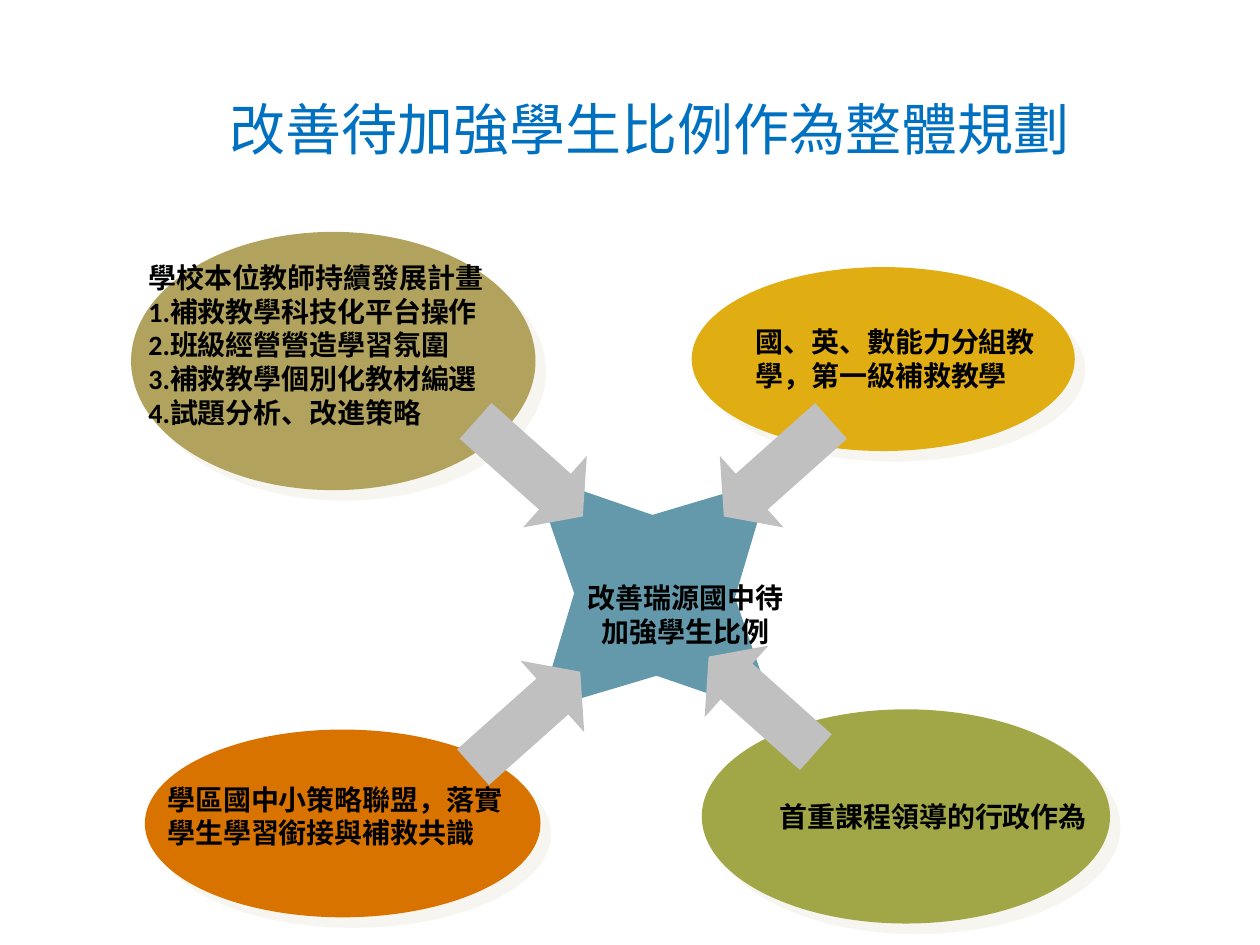
import pptx
import pptx.dml.color
import pptx.enum.shapes
import pptx.enum.text
import pptx.oxml
import pptx.oxml.ns
import pptx.util
from pptx.util import Inches

RGBColor = pptx.dml.color.RGBColor
Shape = pptx.enum.shapes.MSO_SHAPE
Align = pptx.enum.text.PP_ALIGN
Anchor = pptx.enum.text.MSO_ANCHOR

TITLE_BLUE = RGBColor(0x00, 0x70, 0xC0)
BLACK = RGBColor(0x00, 0x00, 0x00)
STAR_BLUE = RGBColor(0x63, 0x99, 0xAB)
KHAKI = RGBColor(0xB1, 0xA3, 0x5D)
GOLD = RGBColor(0xE0, 0xAD, 0x12)
ORANGE = RGBColor(0xD9, 0x73, 0x00)
OLIVE = RGBColor(0xA1, 0xA6, 0x46)
ARROW_GREY = RGBColor(0xC0, 0xC0, 0xC0)
SHADOW = RGBColor(0xEE, 0xEC, 0xE1)

CJK_FONT = "Noto Sans CJK SC"
LATIN_FONT = "Calibri"


def write_text(frame, text, *, size=16, font=LATIN_FONT, color=BLACK,
               bold=True, align=Align.LEFT, anchor=Anchor.TOP):
    """Fill the frame with one paragraph per line of text."""
    frame.word_wrap = True
    frame.vertical_anchor = anchor
    for index, line in enumerate(text.split("\n")):
        para = frame.paragraphs[0] if index == 0 else frame.add_paragraph()
        para.alignment = align
        span = para.add_run()
        span.text = line
        span.font.name = font
        span.font.size = pptx.util.Pt(size)
        span.font.bold = bold
        span.font.color.rgb = color


def add_soft_shadow(shape):
    """Cast a pale, half transparent shadow to the lower right."""
    effects = shape._element.spPr.find(pptx.oxml.ns.qn("a:effectLst"))
    effects.append(pptx.oxml.parse_xml(
        f'<a:outerShdw {pptx.oxml.ns.nsdecls("a")} blurRad="0" '
        f'dist="{pptx.util.Pt(8.5)}" dir="{45 * 60000}" algn="ctr" '
        f'rotWithShape="0"><a:srgbClr val="{SHADOW}">'
        '<a:alpha val="50000"/></a:srgbClr></a:outerShdw>'))


class PlanSlide:
    def __init__(self, deck):
        self.page = deck.slides.add_slide(deck.slide_layouts[0])
        subtitle = self.page.placeholders[1]._element
        subtitle.getparent().remove(subtitle)

    def title(self, text, left, top, width, height):
        box = self.page.shapes.title
        box.left, box.top = Inches(left), Inches(top)
        box.width, box.height = Inches(width), Inches(height)
        write_text(box.text_frame, text, size=32, font=CJK_FONT,
                   color=TITLE_BLUE, bold=False, align=Align.CENTER,
                   anchor=Anchor.MIDDLE)

    def shape(self, kind, place, color, rotation=0):
        shape = self.page.shapes.add_shape(kind, *map(Inches, place))
        shape.shadow.inherit = False
        shape.fill.solid()
        shape.fill.fore_color.rgb = color
        shape.line.fill.background()
        shape.rotation = rotation
        return shape

    def star(self, place):
        star = self.shape(Shape.STAR_4_POINT, place, STAR_BLUE, 315)
        star.adjustments[0] = 0.24

    def ellipse(self, place, color):
        add_soft_shadow(self.shape(Shape.OVAL, place, color))

    def arrow(self, left, top, rotation):
        arrow = self.shape(Shape.RIGHT_ARROW, (left, top, 1.14, 0.76),
                           ARROW_GREY, rotation)
        arrow.adjustments[0] = 0.5
        arrow.adjustments[1] = 0.39

    def label(self, text, place, **style):
        box = self.page.shapes.add_textbox(*map(Inches, place))
        write_text(box.text_frame, text, **style)


def main():
    deck = pptx.Presentation()
    deck.slide_width, deck.slide_height = Inches(10), Inches(7.5)
    plan = PlanSlide(deck)
    plan.title("改善待加強學生比例作為整體規劃", 0.91, 0.21, 8.5, 1.61)
    plan.star((3.9, 3.36, 2.59, 2.73))

    for place, color in (
        ((1.04, 1.84, 3.21, 2.05), KHAKI),
        ((5.49, 2.12, 3.04, 1.46), GOLD),
        ((1.15, 5.79, 3.14, 1.49), ORANGE),
        ((5.57, 5.63, 3.24, 1.7), OLIVE),
    ):
        plan.ellipse(place, color)

    # Every arrow points from its ellipse to the star, at one slope.
    slope = 41.7
    plan.arrow(3.61, 5.33, 360 - slope)
    plan.arrow(5.48, 5.21, 180 + slope)
    plan.arrow(3.63, 3.34, slope)
    plan.arrow(5.6, 3.34, 180 - slope)

    plan.label("改善瑞源國中待\n加強學生比例", (4.1, 4.56, 2.68, 0.64),
               font=CJK_FONT, align=Align.CENTER)
    for text, place in (
        ("學區國中小策略聯盟，落實學生學習銜接與補救共識",
         (1.23, 6.16, 2.92, 0.64)),
        ("學校本位教師持續發展計畫\n1.補救教學科技化平台操作\n"
         "2.班級經營營造學習氛圍\n3.補救教學個別化教材編選\n"
         "4.試題分析、改進策略", (1.08, 2.02, 3.23, 1.75)),
        ("首重課程領導的行政作為", (6.09, 6.3, 2.89, 0.37)),
        ("國、英、數能力分組教學，第一級補救教學",
         (5.9, 2.53, 2.58, 0.64)),
    ):
        plan.label(text, place)

    deck.save("out.pptx")


if __name__ == "__main__":
    main()
